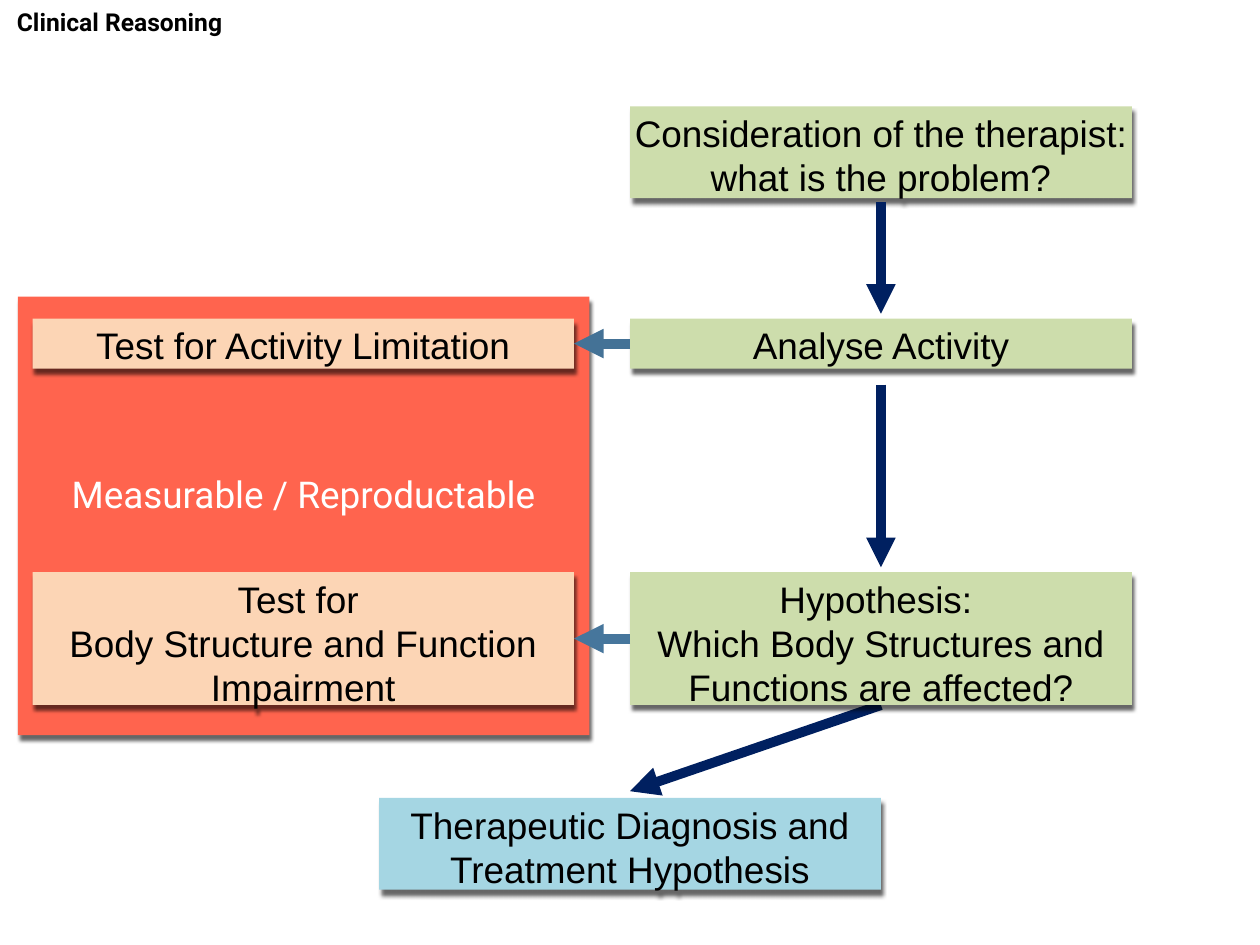
from dataclasses import dataclass

from lxml import etree
from pptx import Presentation
from pptx.dml.color import RGBColor
from pptx.enum.shapes import MSO_CONNECTOR, MSO_SHAPE
from pptx.enum.text import MSO_ANCHOR, PP_ALIGN
from pptx.oxml.ns import qn
from pptx.util import Pt

RECT = MSO_SHAPE.RECTANGLE
STRAIGHT = MSO_CONNECTOR.STRAIGHT
TOP, MIDDLE, BOTTOM = MSO_ANCHOR.TOP, MSO_ANCHOR.MIDDLE, MSO_ANCHOR.BOTTOM
CENTER = PP_ALIGN.CENTER


@dataclass(frozen=True)
class Theme:
    black: str = "000000"
    white: str = "FFFFFF"
    red: str = "FF644E"
    green: str = "CDDDAC"
    blue: str = "A5D6E3"
    peach: str = "FCD5B5"
    navy: str = "002060"
    steel: str = "447296"
    slate: str = "46769C"
    body: str = "Arial"
    head: str = "Roboto"
    small: int = 20
    large: int = 30
    stroke: int = 8


def write(frame, text, font, size, color, bold=False, anchor=TOP,
          inset=3.6, foot=None):
    frame.word_wrap = True
    frame.vertical_anchor = anchor
    frame.margin_left = frame.margin_right = frame.margin_top = Pt(inset)
    frame.margin_bottom = Pt(inset if foot is None else foot)
    for i, line in enumerate(text.split("\n")):
        para = frame.add_paragraph() if i else frame.paragraphs[0]
        para.alignment = CENTER
        run = para.add_run()
        run.text = line
        run.font.name = font
        run.font.size = Pt(size)
        run.font.bold = bold
        run.font.color.rgb = RGBColor.from_string(color)


class Chart:
    def __init__(self, slide, theme):
        self.shapes = slide.shapes
        self.theme = theme

    def title(self, text, x, y, w, h):
        area = self.shapes.add_textbox(Pt(x), Pt(y), Pt(w), Pt(h))
        write(area.text_frame, text, self.theme.head, self.theme.small,
              self.theme.black, bold=True, anchor=BOTTOM, inset=4)

    def block(self, x, y, w, h, fill):
        shape = self.shapes.add_shape(RECT, Pt(x), Pt(y), Pt(w), Pt(h))
        shape.fill.solid()
        shape.fill.fore_color.rgb = RGBColor.from_string(fill)
        shape.line.fill.background()
        shape.shadow.inherit = False
        effects = shape.element.spPr.find(qn("a:effectLst"))
        shade = etree.SubElement(effects, qn("a:outerShdw"), blurRad=str(Pt(3)),
                                 dist=str(Pt(4.6)), dir=str(70 * 60000),
                                 algn="tl", rotWithShape="0")
        tint = etree.SubElement(shade, qn("a:srgbClr"), val=self.theme.black)
        etree.SubElement(tint, qn("a:alpha"), val="60000")
        return shape.text_frame

    def panel(self, text, x, y, w, h):
        write(self.block(x, y, w, h, self.theme.red), text, self.theme.head,
              self.theme.large, self.theme.white, anchor=MIDDLE, inset=4, foot=40)

    def step(self, text, x, y, w, h, fill):
        write(self.block(x, y, w, h, fill), text, self.theme.body,
              self.theme.large, self.theme.black)

    def arrow(self, x1, y1, x2, y2, color):
        link = self.shapes.add_connector(STRAIGHT, Pt(x1), Pt(y1), Pt(x2), Pt(y2))
        link.line.width = Pt(self.theme.stroke)
        link.line.color.rgb = RGBColor.from_string(color)
        props = link.element.spPr
        etree.SubElement(props.find(qn("a:ln")), qn("a:tailEnd"), type="triangle")
        etree.SubElement(props, qn("a:effectLst"))


def main():
    deck = Presentation()
    deck.slide_width, deck.slide_height = Pt(1024), Pt(768)
    theme = Theme()
    chart = Chart(deck.slides.add_slide(deck.slide_layouts[6]), theme)

    left, right, wide = 26.5, 512, 408
    test = 440
    axis = right + wide / 2
    one, two, three = 40.5, 74.5, 108
    first, second, third, last = 86.5, 259, 465, 648.5

    chart.arrow(axis, third + three, right, 643, theme.navy)
    chart.panel("Measurable / Reproductable", 14.5, 241, 464.5, 356.5)
    chart.title("Clinical Reasoning", 0, 0, 194.5, 34)

    steps = [
        ("Consideration of the therapist: what is the problem?",
         right, first, wide, two, theme.green),
        ("Analyse Activity", right, second, wide, one, theme.green),
        ("Hypothesis: \nWhich Body Structures and Functions are affected?",
         right, third, wide, three, theme.green),
        ("Therapeutic Diagnosis and Treatment Hypothesis",
         right - wide / 2, last, wide, two, theme.blue),
        ("Test for Activity Limitation", left, second, test, one, theme.peach),
        ("Test for \nBody Structure and Function Impairment",
         left, third, test, three, theme.peach),
    ]
    for step in steps:
        chart.step(*step)

    for start, end in ((164, 255), (312.5, 461)):
        chart.arrow(axis, start, axis, end, theme.navy)
    for top, high, color in ((second, one, theme.steel), (third, three, theme.slate)):
        mid = top + high / 2
        chart.arrow(right, mid, left + test, mid, color)

    deck.save("out.pptx")


if __name__ == "__main__":
    main()
